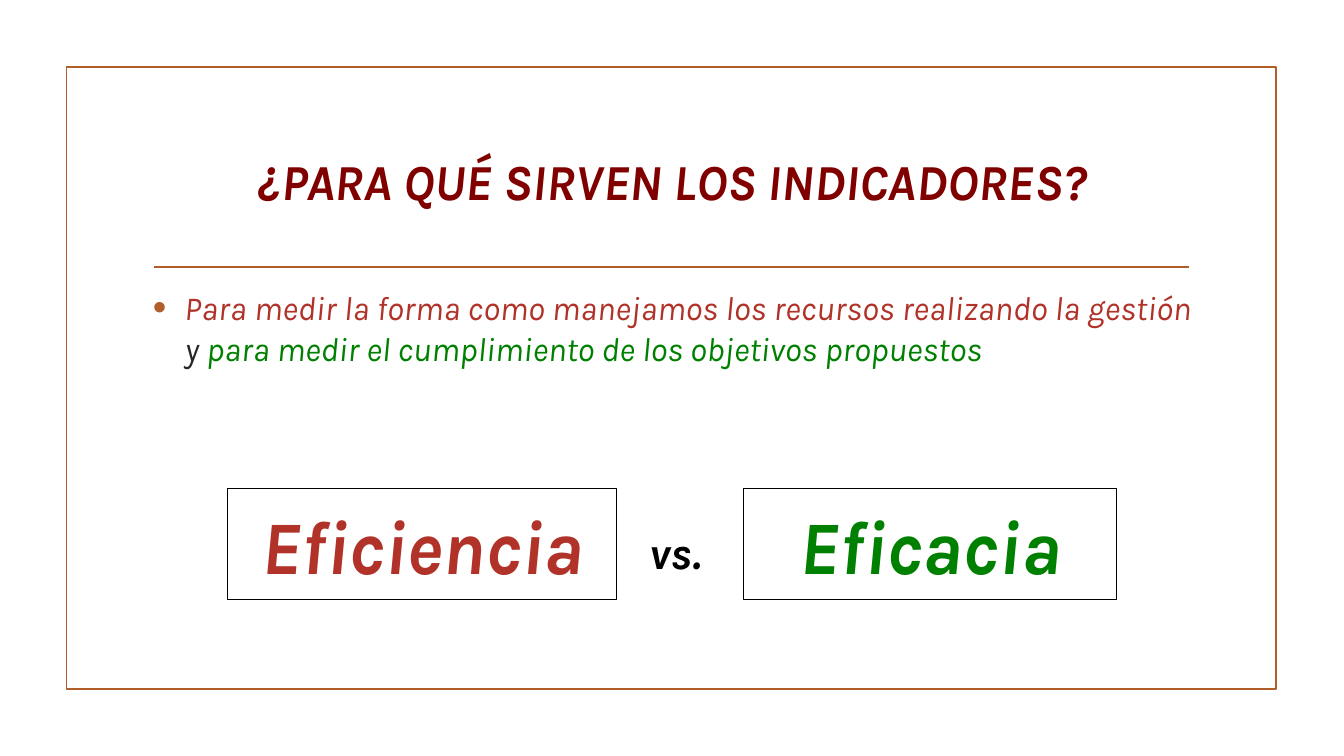
import pptx
import pptx.dml.color
import pptx.enum.shapes
import pptx.enum.text
import pptx.oxml
import pptx.oxml.ns
import pptx.util
from dataclasses import dataclass

Pt = pptx.util.Pt
Align = pptx.enum.text.PP_ALIGN
Anchor = pptx.enum.text.MSO_ANCHOR


@dataclass(frozen=True)
class Theme:
    """Colours, font and type sizes of the slide."""
    font: str = "Karla"
    rust: str = "B15E28"
    maroon: str = "800000"
    red: str = "B13228"
    green: str = "008000"
    black: str = "000000"
    dark: str = "262626"
    title: int = 36
    body: int = 24
    term: int = 54
    versus: int = 32


theme = Theme()


def rgb(color):
    """Turn a hex string into a colour."""
    return pptx.dml.color.RGBColor.from_string(color)


def style(run, size, color, bold=True):
    """Format one italic run."""
    font = run.font
    font.name, font.size = theme.font, Pt(size)
    font.bold, font.italic = bold, True
    font.color.rgb = rgb(color)


def label(shape, text, size, color, align=Align.CENTER, wrap=False):
    """Set one line of bold text, centred in height."""
    frame = shape.text_frame
    frame.text = text
    frame.word_wrap = wrap
    frame.vertical_anchor = Anchor.MIDDLE
    para = frame.paragraphs[0]
    para.alignment = align
    style(para.runs[0], size, color)


def outline(slide, box, color, width):
    """Add an unfilled rectangle with a thin line."""
    kind = pptx.enum.shapes.MSO_SHAPE.RECTANGLE
    shape = slide.shapes.add_shape(kind, *map(Pt, box))
    shape.shadow.inherit = False
    shape.fill.background()
    shape.line.color.rgb = rgb(color)
    shape.line.width = Pt(width)
    return shape


def border(slide, box):
    """Draw the frame and the rule below the title."""
    outline(slide, box, theme.rust, 1.25)
    left, top, width, height = box
    inset, y = 62.5, Pt(top + 142.8)
    rule = slide.shapes.add_connector(
        pptx.enum.shapes.MSO_CONNECTOR.STRAIGHT,
        Pt(left + inset), y, Pt(left + width - inset), y)
    rule.line.color.rgb = rgb(theme.rust)
    rule.line.width = Pt(1.25)
    props = rule._element.spPr
    props.append(props.makeelement(pptx.oxml.ns.qn("a:effectLst"), {}))


def heading(slide, box):
    """Place and format the title."""
    title = slide.shapes.title
    title.left, title.top, title.width, title.height = map(Pt, box)
    label(title, "¿PARA QUÉ SIRVEN LOS INDICADORES?",
          theme.title, theme.maroon, wrap=True)


def bullet(para, indent):
    """Give a paragraph a hanging round bullet."""
    props = para._p.get_or_add_pPr()
    props.set("marL", str(Pt(indent)))
    props.set("indent", str(-Pt(indent)))
    space = pptx.oxml.ns.nsdecls("a")
    for part in (f'<a:buClr {space}><a:srgbClr val="{theme.rust}"/></a:buClr>',
                 f'<a:buSzPct {space} val="115000"/>',
                 f'<a:buFont {space} typeface="Arial"/>',
                 f'<a:buChar {space} char="•"/>'):
        props.append(pptx.oxml.parse_xml(part))


def answer(slide, box):
    """Write the bulleted answer in its three colours."""
    frame = slide.shapes.add_textbox(*map(Pt, box)).text_frame
    frame.word_wrap = True
    para = frame.paragraphs[0]
    para.alignment = Align.JUSTIFY
    para.space_after = Pt(6)
    bullet(para, 22.5)
    parts = (
        ("Para medir la forma como manejamos los recursos realizando la gestión",
         theme.red),
        (" y ", theme.dark),
        ("para medir el cumplimiento de los objetivos propuestos", theme.green))
    for text, color in parts:
        run = para.add_run()
        run.text = text
        style(run, theme.body, color, bold=False)


def contrast(slide, box):
    """Set the two boxed terms against each other."""
    left, top, width, height = box
    first, second = 278, 266.4
    terms = (("Eficiencia", theme.red, left, first),
             ("Eficacia", theme.green, left + width - second, second))
    for text, color, x, span in terms:
        shape = outline(slide, (x, top, span, height), theme.black, 0.75)
        label(shape, text, theme.term, color)
    spot = (left + first + 16.5, top + 22.3, 59.8, 45.4)
    versus = slide.shapes.add_textbox(*map(Pt, spot))
    label(versus, "vs.", theme.versus, theme.black, Align.LEFT)


def main():
    """Build and save the slide."""
    deck = pptx.Presentation()
    deck.slide_width, deck.slide_height = Pt(960), Pt(540)
    slide = deck.slides.add_slide(deck.slide_layouts.get_by_name("Title Only"))
    border(slide, (47.5, 48, 864, 444))
    heading(slide, (102.2, 77, 756, 103))
    answer(slide, (102.2, 201.6, 756, 261.4))
    contrast(slide, (162.7, 349.2, 635.1, 79.2))
    deck.save("out.pptx")


if __name__ == "__main__":
    main()
